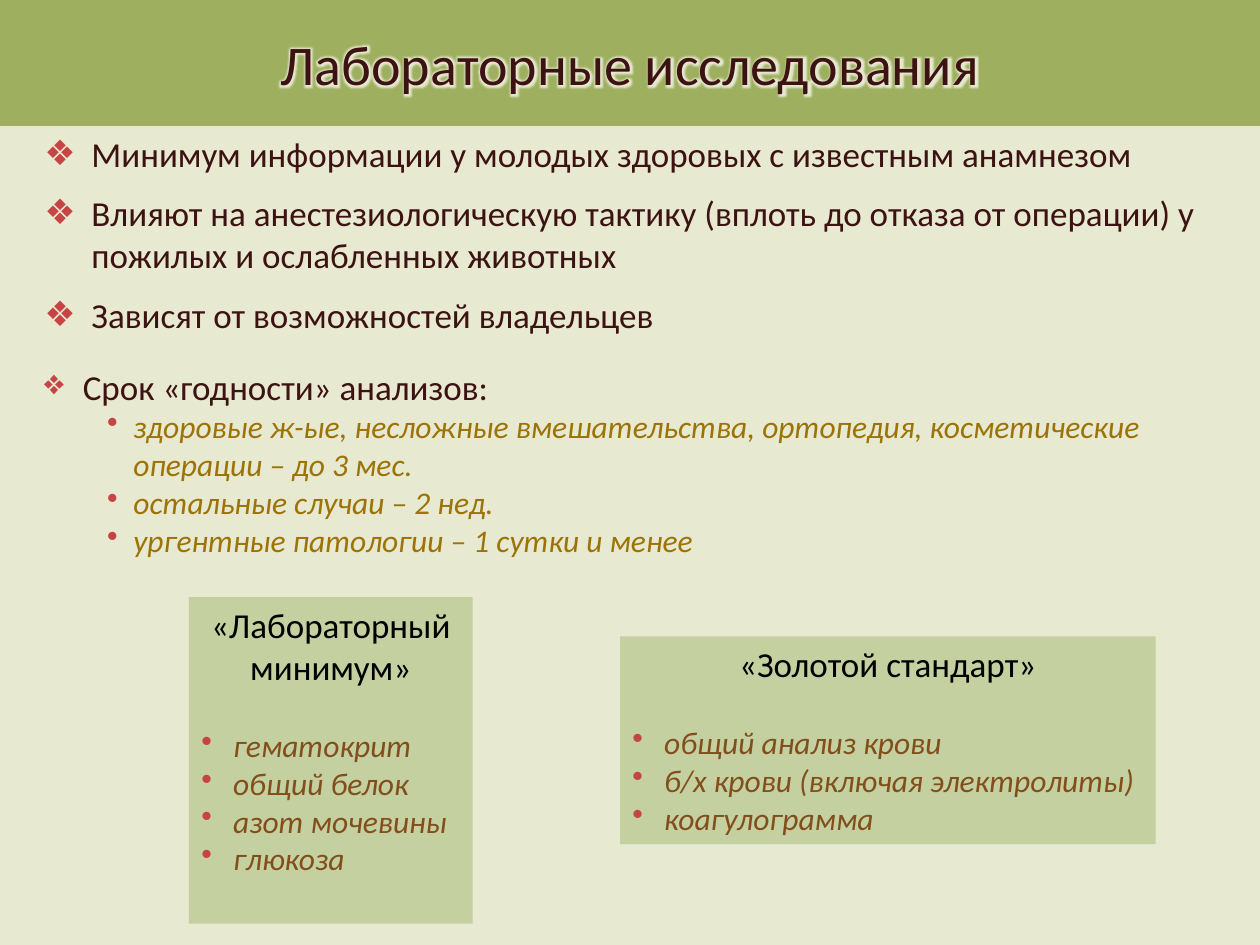
"""Builds the slide on laboratory tests before anaesthesia."""
from dataclasses import dataclass

from lxml import etree
from pptx import Presentation
from pptx.dml.color import RGBColor
from pptx.enum.shapes import MSO_SHAPE
from pptx.enum.text import MSO_ANCHOR, MSO_AUTO_SIZE, PP_ALIGN
from pptx.oxml.ns import qn
from pptx.shapes.base import BaseShape
from pptx.slide import Slide
from pptx.text.text import TextFrame
from pptx.util import Cm, Pt

RECT = MSO_SHAPE.RECTANGLE
TOP, MIDDLE = MSO_ANCHOR.TOP, MSO_ANCHOR.MIDDLE
LEFT, CENTER = PP_ALIGN.LEFT, PP_ALIGN.CENTER
FIXED = MSO_AUTO_SIZE.NONE


@dataclass(frozen=True)
class Theme:
    font: str = "Calibri"
    back: str = "E8E9D1"
    band: str = "9EB060"
    panel: str = "C5D0A0"
    dark: str = "3D1212"
    black: str = "000000"
    gold: str = "9C7306"
    brown: str = "824F1C"
    mark: str = "C74444"
    title: int = 32
    main: int = 20
    small: int = 18


THEME = Theme()


@dataclass(frozen=True)
class Style:
    size: int
    color: str
    slant: bool = False
    mark: str = ""
    margin: float = 0
    hang: float = 0
    before: float = 0
    after: float = 0
    align: PP_ALIGN = LEFT


@dataclass(frozen=True)
class Box:
    left: float
    top: float
    width: float
    height: float


@dataclass(frozen=True)
class Panel:
    box: Box
    head: str
    items: tuple[str, ...]


TITLE = Style(THEME.title, THEME.dark, align=CENTER)
POINT = Style(THEME.main, THEME.dark, mark="❖", margin=0.95, hang=0.95, before=4, after=6)
TERM = Style(THEME.main, THEME.dark, mark="❖", margin=0.78, hang=0.78)
CASE = Style(THEME.small, THEME.gold, True, "•", 1.8, 0.53)
HEAD = Style(THEME.main, THEME.black, after=22, align=CENTER)
TEST = Style(THEME.small, THEME.brown, True, "•", 0.64, 0.64)

POINTS = (
    "Минимум информации у молодых здоровых с известным анамнезом",
    "Влияют на анестезиологическую тактику (вплоть до отказа от операции) у пожилых и ослабленных животных",
    "Зависят от возможностей владельцев",
)
CASES = (
    "здоровые ж-ые, несложные вмешательства, ортопедия, косметические операции – до 3 мес.",
    "остальные случаи – 2 нед.",
    "ургентные патологии – 1 сутки и менее",
)
PANELS = (
    Panel(Box(3.81, 12.04, 5.72, 6.58), "«Лабораторный минимум»",
          ("гематокрит", "общий белок", "азот мочевины", "глюкоза")),
    Panel(Box(12.5, 12.83, 10.8, 4.19), "«Золотой стандарт»",
          ("общий анализ крови", "б/х крови (включая электролиты)", "коагулограмма")),
)


def place(shape: BaseShape, box: Box) -> None:
    shape.left, shape.top = Cm(box.left), Cm(box.top)
    shape.width, shape.height = Cm(box.width), Cm(box.height)


def paint(shape: BaseShape, color: str) -> None:
    shape.fill.solid()
    shape.fill.fore_color.rgb = RGBColor.from_string(color)
    shape.line.fill.background()


def setup(frame: TextFrame, anchor: MSO_ANCHOR = TOP) -> None:
    frame.word_wrap = True
    frame.auto_size = FIXED
    frame.vertical_anchor = anchor


def write(frame: TextFrame, lines: tuple[str, ...], style: Style) -> None:
    for line in lines:
        para = frame.paragraphs[0]
        if para.runs:
            para = frame.add_paragraph()
        para.alignment = style.align
        para.line_spacing = 1.0
        para.space_before, para.space_after = Pt(style.before), Pt(style.after)
        props = para._p.get_or_add_pPr()
        props.set("marL", str(Cm(style.margin)))
        props.set("indent", str(-Cm(style.hang)))
        if style.mark:
            tint = etree.SubElement(props, qn("a:buClr"))
            etree.SubElement(tint, qn("a:srgbClr"), val=THEME.mark)
            etree.SubElement(props, qn("a:buChar"), char=style.mark)
        else:
            etree.SubElement(props, qn("a:buNone"))
        run = para.add_run()
        run.text = line
        font = run.font
        font.name, font.size, font.italic = THEME.font, Pt(style.size), style.slant
        font.color.rgb = RGBColor.from_string(style.color)


def add_glow(frame: TextFrame) -> None:
    props = frame.paragraphs[0].runs[0].font._element
    effect = etree.Element(qn("a:effectLst"))
    glow = etree.SubElement(effect, qn("a:glow"), rad=str(Pt(5)))
    etree.SubElement(glow, qn("a:srgbClr"), val=THEME.back)
    props.find(qn("a:solidFill")).addnext(effect)


def add_title(slide: Slide) -> None:
    title = slide.shapes.title
    place(title, Box(0, 0, 25.4, 2.54))
    paint(title, THEME.band)
    setup(title.text_frame, MIDDLE)
    write(title.text_frame, ("Лабораторные исследования",), TITLE)
    add_glow(title.text_frame)


def add_points(slide: Slide) -> None:
    body = slide.placeholders[1]
    place(body, Box(0.64, 2.54, 24.33, 4.45))
    setup(body.text_frame)
    write(body.text_frame, POINTS, POINT)


def add_terms(slide: Slide) -> None:
    shape = slide.shapes.add_textbox(Cm(0.64), Cm(7.24), Cm(24.33), Cm(4.19))
    setup(shape.text_frame)
    write(shape.text_frame, ("Срок «годности» анализов:",), TERM)
    write(shape.text_frame, CASES, CASE)


def add_panel(slide: Slide, panel: Panel) -> None:
    box = panel.box
    shape = slide.shapes.add_shape(RECT, Cm(box.left), Cm(box.top), Cm(box.width), Cm(box.height))
    shape.shadow.inherit = False
    paint(shape, THEME.panel)
    setup(shape.text_frame)
    write(shape.text_frame, (panel.head,), HEAD)
    write(shape.text_frame, panel.items, TEST)


def main() -> None:
    deck = Presentation()
    deck.slide_width, deck.slide_height = Cm(25.4), Cm(19.05)
    slide = deck.slides.add_slide(deck.slide_layouts[1])
    fill = slide.background.fill
    fill.solid()
    fill.fore_color.rgb = RGBColor.from_string(THEME.back)
    add_title(slide)
    add_points(slide)
    add_terms(slide)
    for panel in PANELS:
        add_panel(slide, panel)
    deck.save("out.pptx")


if __name__ == "__main__":
    main()
